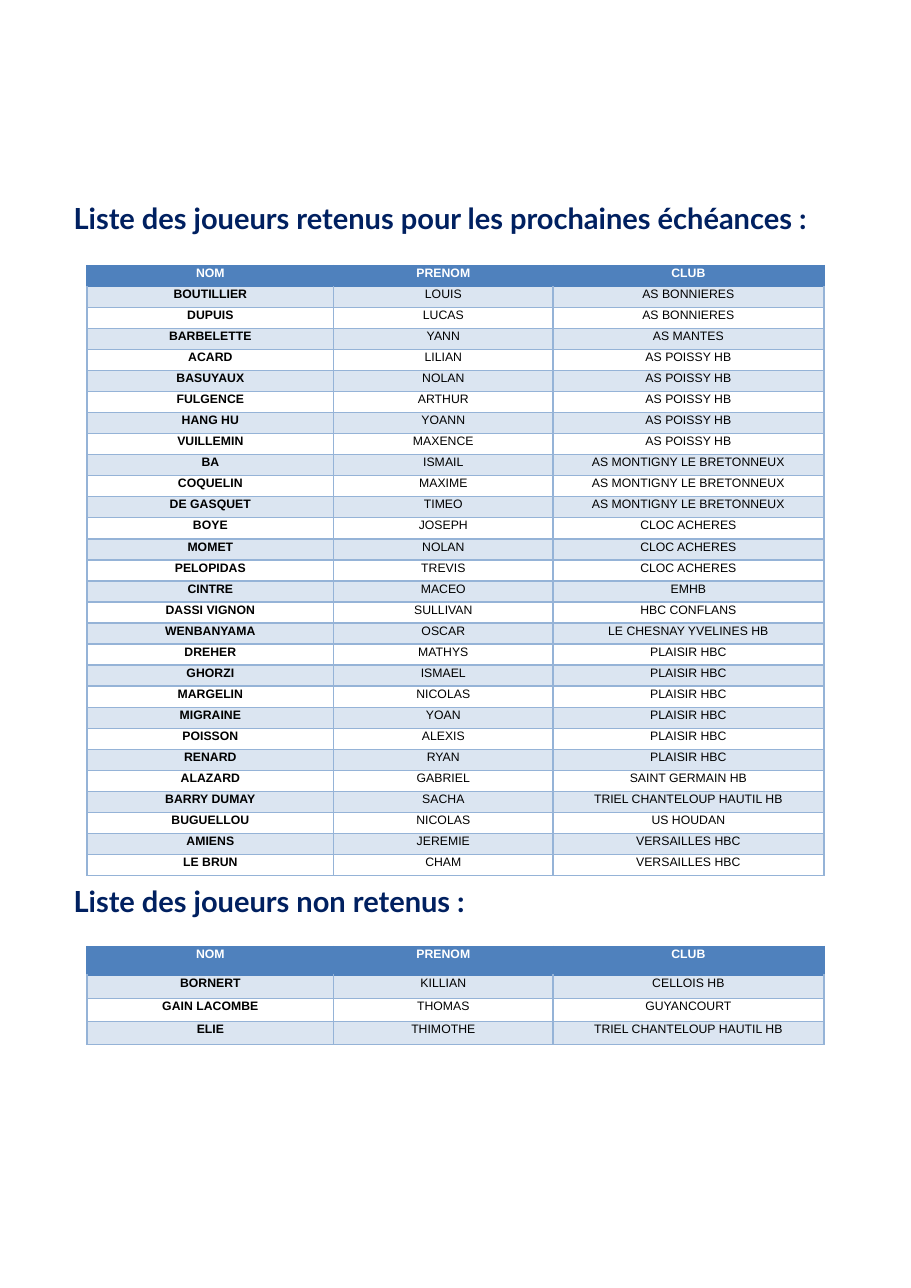
from dataclasses import dataclass

from lxml.etree import SubElement
from pptx import Presentation
from pptx.dml.color import RGBColor
from pptx.enum.text import MSO_ANCHOR, PP_ALIGN
from pptx.oxml.ns import qn
from pptx.slide import Slide
from pptx.table import _Cell
from pptx.util import Inches, Pt

COLORS = {
    "heading": "002060",
    "header": "4F81BD",
    "border": "95B3D7",
    "band": "DBE5F1",
    "white": "FFFFFF",
    "black": "000000",
}
COLUMN_TITLES = ("NOM", "PRENOM", "CLUB")
COLUMN_WIDTHS = (2.24, 1.99, 2.46)
TABLE_LEFT = 0.79
HEADING_LEFT, HEADING_WIDTH, HEADING_HEIGHT = 0.57, 7.13, 0.4


@dataclass
class PlayerList:
    heading: str
    heading_top: float
    table_top: float
    header_height: float
    table_height: float
    players: list[tuple[str, str, str]]


SELECTED = PlayerList(
    "Liste des joueurs retenus pour les prochaines échéances :", 1.78, 2.41, 0.19, 5.54,
    [
        ("BOUTILLIER", "LOUIS", "AS BONNIERES"),
        ("DUPUIS", "LUCAS", "AS BONNIERES"),
        ("BARBELETTE", "YANN", "AS MANTES"),
        ("ACARD", "LILIAN", "AS POISSY HB"),
        ("BASUYAUX", "NOLAN", "AS POISSY HB"),
        ("FULGENCE", "ARTHUR", "AS POISSY HB"),
        ("HANG HU", "YOANN", "AS POISSY HB"),
        ("VUILLEMIN", "MAXENCE", "AS POISSY HB"),
        ("BA", "ISMAIL", "AS MONTIGNY LE BRETONNEUX"),
        ("COQUELIN", "MAXIME", "AS MONTIGNY LE BRETONNEUX"),
        ("DE GASQUET", "TIMEO", "AS MONTIGNY LE BRETONNEUX"),
        ("BOYE", "JOSEPH", "CLOC ACHERES"),
        ("MOMET", "NOLAN", "CLOC ACHERES"),
        ("PELOPIDAS", "TREVIS", "CLOC ACHERES"),
        ("CINTRE", "MACEO", "EMHB"),
        ("DASSI VIGNON", "SULLIVAN", "HBC CONFLANS"),
        ("WENBANYAMA", "OSCAR", "LE CHESNAY YVELINES HB"),
        ("DREHER", "MATHYS", "PLAISIR HBC"),
        ("GHORZI", "ISMAEL", "PLAISIR HBC"),
        ("MARGELIN", "NICOLAS", "PLAISIR HBC"),
        ("MIGRAINE", "YOAN", "PLAISIR HBC"),
        ("POISSON", "ALEXIS", "PLAISIR HBC"),
        ("RENARD", "RYAN", "PLAISIR HBC"),
        ("ALAZARD", "GABRIEL", "SAINT GERMAIN HB"),
        ("BARRY DUMAY", "SACHA", "TRIEL CHANTELOUP HAUTIL HB"),
        ("BUGUELLOU", "NICOLAS", "US HOUDAN"),
        ("AMIENS", "JEREMIE", "VERSAILLES HBC"),
        ("LE BRUN", "CHAM", "VERSAILLES HBC"),
    ],
)
NOT_SELECTED = PlayerList(
    "Liste des joueurs non retenus :", 7.98, 8.59, 0.26, 0.89,
    [
        ("BORNERT", "KILLIAN", "CELLOIS HB"),
        ("GAIN LACOMBE", "THOMAS", "GUYANCOURT"),
        ("ELIE", "THIMOTHE", "TRIEL CHANTELOUP HAUTIL HB"),
    ],
)


def color(name: str) -> RGBColor:
    return RGBColor.from_string(COLORS[name])


def add_heading(slide: Slide, text: str, top: float) -> None:
    shape = slide.shapes.add_textbox(
        Inches(HEADING_LEFT), Inches(top), Inches(HEADING_WIDTH), Inches(HEADING_HEIGHT)
    )
    frame = shape.text_frame
    frame.word_wrap = True
    frame.vertical_anchor = MSO_ANCHOR.MIDDLE
    paragraph = frame.paragraphs[0]
    paragraph.alignment = PP_ALIGN.JUSTIFY
    run = paragraph.add_run()
    run.text = text
    run.font.name = "Lato"
    run.font.size = Pt(19)
    run.font.bold = True
    run.font.color.rgb = color("heading")


def set_borders(cell: _Cell, sides: dict[str, str]) -> None:
    properties = cell._tc.get_or_add_tcPr()
    for index, (side, name) in enumerate(sides.items()):
        line = properties.makeelement(qn(f"a:{side}"), {"w": str(Pt(1))})
        fill = SubElement(line, qn("a:solidFill"))
        SubElement(fill, qn("a:srgbClr"), val=COLORS[name])
        properties.insert(index, line)


def fill_cell(cell: _Cell, text: str, row: int, column: int) -> None:
    is_header = row == 0
    cell.margin_left = cell.margin_right = Inches(0.07)
    cell.margin_top = cell.margin_bottom = Inches(0)
    cell.fill.solid()
    cell.fill.fore_color.rgb = color("header" if is_header else "band" if row % 2 else "white")
    edge = "header" if is_header else "border"
    top = "header" if row <= 1 else "border"
    set_borders(cell, {"lnL": edge, "lnR": edge, "lnT": top, "lnB": edge})
    paragraph = cell.text_frame.paragraphs[0]
    paragraph.alignment = PP_ALIGN.CENTER
    paragraph.line_spacing = 1.07
    paragraph.space_after = Pt(8)
    run = paragraph.add_run()
    run.text = text
    run.font.name = "Arial"
    run.font.size = Pt(8)
    run.font.bold = is_header or column == 0
    run.font.color.rgb = color("white" if is_header else "black")


def add_player_list(slide: Slide, player_list: PlayerList) -> None:
    add_heading(slide, player_list.heading, player_list.heading_top)
    rows = [COLUMN_TITLES, *player_list.players]
    table = slide.shapes.add_table(
        len(rows), len(COLUMN_TITLES), Inches(TABLE_LEFT), Inches(player_list.table_top),
        Inches(sum(COLUMN_WIDTHS)), Inches(player_list.table_height),
    ).table
    table.first_row = table.horz_banding = False
    for column, width in zip(table.columns, COLUMN_WIDTHS):
        column.width = Inches(width)
    body_height = player_list.table_height - player_list.header_height
    for row_index, texts in enumerate(rows):
        height = body_height / len(player_list.players) if row_index else player_list.header_height
        table.rows[row_index].height = Inches(height)
        for column_index, text in enumerate(texts):
            fill_cell(table.cell(row_index, column_index), text, row_index, column_index)


def main() -> None:
    """Build the slide listing selected and non-selected players."""
    presentation = Presentation()
    presentation.slide_width = Inches(8.27)
    presentation.slide_height = Inches(11.69)
    slide = presentation.slides.add_slide(presentation.slide_layouts[6])
    for player_list in (SELECTED, NOT_SELECTED):
        add_player_list(slide, player_list)
    presentation.save("out.pptx")


if __name__ == "__main__":
    main()
